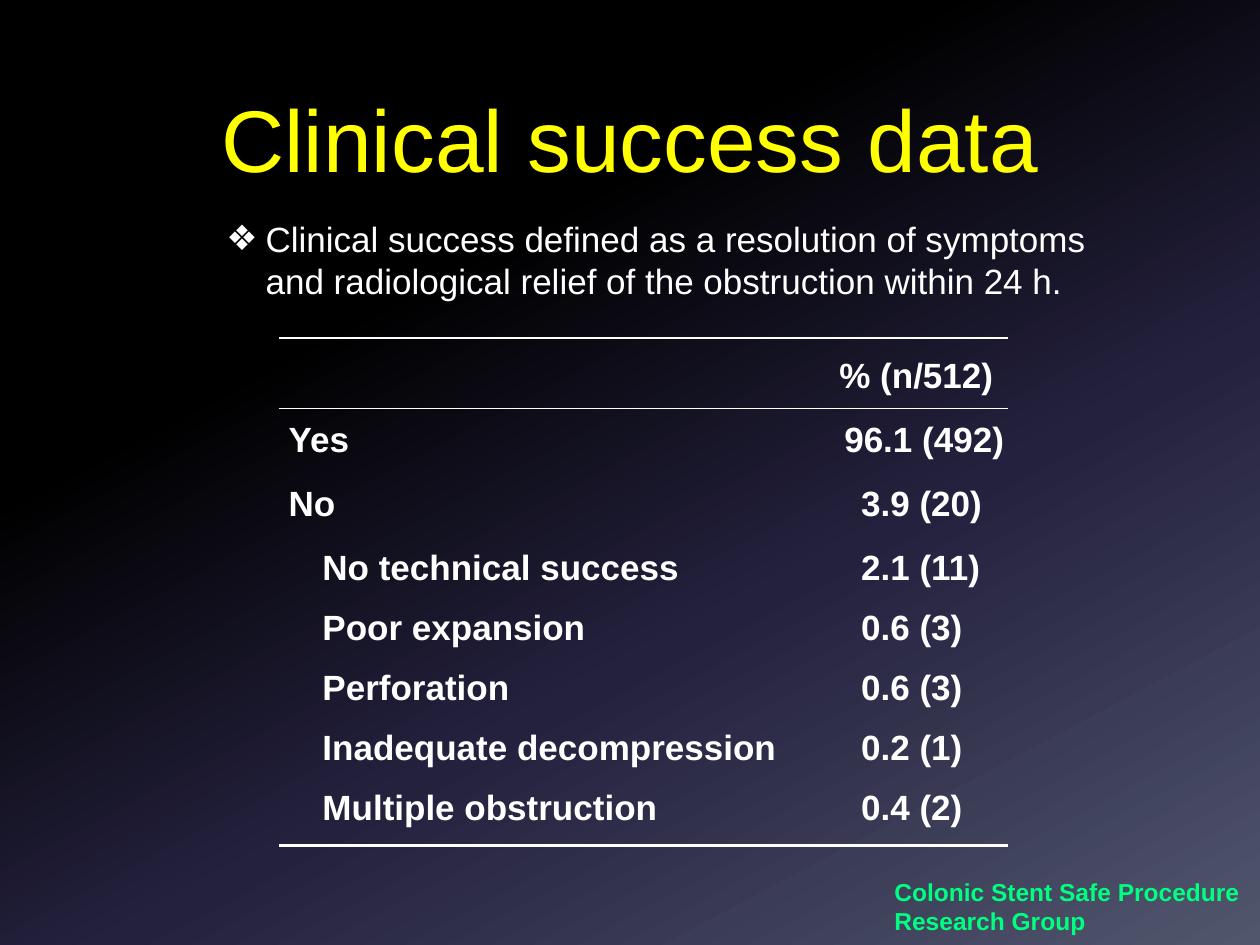
from copy import deepcopy

from lxml.etree import SubElement
from pptx import Presentation
from pptx.dml.color import RGBColor
from pptx.enum.shapes import MSO_CONNECTOR as Connector
from pptx.enum.text import MSO_ANCHOR as Anchor, MSO_AUTO_SIZE as AutoSize, PP_ALIGN as Align
from pptx.oxml.ns import qn
from pptx.util import Cm, Pt

TITLE = "Clinical success data"
DEFINITION = ("Clinical success defined as a resolution of symptoms "
              "and radiological relief of the obstruction within 24 h.")
GROUP = ["Colonic Stent Safe Procedure", "Research Group"]
ROWS = [
    ("header", "", "% (n/512)"),
    ("total", "Yes", "96.1 (492)"),
    ("group", "No", "3.9 (20)"),
    ("reason", "No technical success", "2.1 (11)"),
    ("reason", "Poor expansion", "0.6 (3)"),
    ("reason", "Perforation", "0.6 (3)"),
    ("reason", "Inadequate decompression", "0.2 (1)"),
    ("reason", "Multiple obstruction", "0.4 (2)"),
]
ROW_STYLES = {
    "header": {"height": 1.42, "top": 0.39, "indents": (0.2, 0.41)},
    "total": {"height": 1.3, "top": 0.26, "indents": (0.2, 0.51)},
    "group": {"height": 1.3, "top": 0.25, "indents": (0.2, 0.85)},
    "reason": {"height": 1.21, "top": 0.24, "indents": (0.88, 0.85)},
}
LAST_ROW_HEIGHT = 1.37
TABLE_LEFT, TABLE_TOP = 5.62, 6.81
COLUMN_WIDTHS = (10.89, 3.81)
THEME = {
    "font": "Arial",
    "title": "FFFF00",
    "text": "FFFFFF",
    "group": "00FF80",
    "title_size": 50,
    "text_size": 20,
    "group_size": 14,
    "thick_rule": 1.5,
    "thin_rule": 0.75,
    "gradient": [(0, "000000"), (0.31, "000000"), (0.62, "24213E"), (1, "51566D")],
    "gradient_angle": 298,
    "plain_table": "{2D5ABB26-0587-4C30-8999-92F81FD0307C}",
}


def write_text(paragraph, text, color=THEME["text"], size=THEME["text_size"],
               bold=False, align=Align.LEFT):
    paragraph.alignment = align
    paragraph.space_before = Pt(0)
    run = paragraph.add_run()
    run.text = text
    run.font.name = THEME["font"]
    run.font.size = Pt(size)
    run.font.bold = bold
    run.font.color.rgb = RGBColor.from_string(color)


def place(shape, left, top, width, height):
    shape.left, shape.top = Cm(left), Cm(top)
    shape.width, shape.height = Cm(width), Cm(height)


def paint_background(slide):
    fill = slide.background.fill
    fill.gradient()
    fill.gradient_angle = THEME["gradient_angle"]
    stop_list = slide.element.xpath(".//a:gsLst")[0]
    for extra in range(len(THEME["gradient"]) - len(stop_list)):
        stop_list.append(deepcopy(stop_list[0]))
    for stop, (position, color) in zip(fill.gradient_stops, THEME["gradient"]):
        stop.position = position
        stop.color.rgb = RGBColor.from_string(color)


def add_bullet(paragraph, character, indent):
    properties = paragraph._p.get_or_add_pPr()
    properties.set("marL", str(Cm(indent)))
    properties.set("indent", str(-Cm(indent)))
    SubElement(properties, qn("a:buFont")).set("typeface", THEME["font"])
    SubElement(properties, qn("a:buChar")).set("char", character)


def add_rule(slide, top, width):
    right = TABLE_LEFT + sum(COLUMN_WIDTHS)
    rule = slide.shapes.add_connector(Connector.STRAIGHT, Cm(TABLE_LEFT), Cm(top),
                                      Cm(right), Cm(top))
    rule.line.width = Pt(width)
    rule.line.color.rgb = RGBColor.from_string(THEME["text"])
    SubElement(rule._element.spPr, qn("a:effectLst"))


def add_results(slide):
    heights = [ROW_STYLES[kind]["height"] for kind, *texts in ROWS]
    heights[-1] = LAST_ROW_HEIGHT
    frame = slide.shapes.add_table(len(ROWS), len(COLUMN_WIDTHS), Cm(TABLE_LEFT), Cm(TABLE_TOP),
                                   Cm(sum(COLUMN_WIDTHS)), Cm(sum(heights)))
    table = frame.table
    table.first_row = table.horz_banding = False
    table._tbl.tblPr.find(qn("a:tableStyleId")).text = THEME["plain_table"]
    for column, width in zip(table.columns, COLUMN_WIDTHS):
        column.width = Cm(width)
    for row, height, (kind, *texts) in zip(table.rows, heights, ROWS):
        style = ROW_STYLES[kind]
        row.height = Cm(height)
        for cell, text, indent in zip(row.cells, texts, style["indents"]):
            cell.fill.background()
            cell.vertical_anchor = Anchor.TOP
            cell.margin_left, cell.margin_top = Cm(indent), Cm(style["top"])
            cell.margin_right = cell.margin_bottom = 0
            if text:
                write_text(cell.text_frame.paragraphs[0], text, bold=True)
    add_rule(slide, TABLE_TOP, THEME["thick_rule"])
    add_rule(slide, TABLE_TOP + heights[0], THEME["thin_rule"])
    add_rule(slide, TABLE_TOP + sum(heights), THEME["thick_rule"])


def main():
    presentation = Presentation()
    presentation.slide_width, presentation.slide_height = Cm(25.4), Cm(19.05)
    slide = presentation.slides.add_slide(presentation.slide_layouts[1])
    paint_background(slide)

    title, body = slide.placeholders
    place(title, 1.27, 1.57, 22.86, 3.18)
    title.text_frame.auto_size = AutoSize.NONE
    title.text_frame.vertical_anchor = Anchor.MIDDLE
    title.text_frame.margin_bottom = Cm(0.92)
    write_text(title.text_frame.paragraphs[0], TITLE, color=THEME["title"],
               size=THEME["title_size"], align=Align.CENTER)

    place(body, 4.31, 4.25, 18.67, 1.96)
    body.text_frame.auto_size = AutoSize.NONE
    definition = body.text_frame.paragraphs[0]
    add_bullet(definition, "❖", 0.79)
    write_text(definition, DEFINITION)

    add_results(slide)

    group_box = slide.shapes.add_textbox(Cm(17.78), Cm(17.55), Cm(7.54), Cm(1.45))
    group_frame = group_box.text_frame
    group_frame.word_wrap = False
    for index, line in enumerate(GROUP):
        paragraph = group_frame.add_paragraph() if index else group_frame.paragraphs[0]
        write_text(paragraph, line, color=THEME["group"], size=THEME["group_size"], bold=True)

    presentation.save("out.pptx")


if __name__ == "__main__":
    main()
